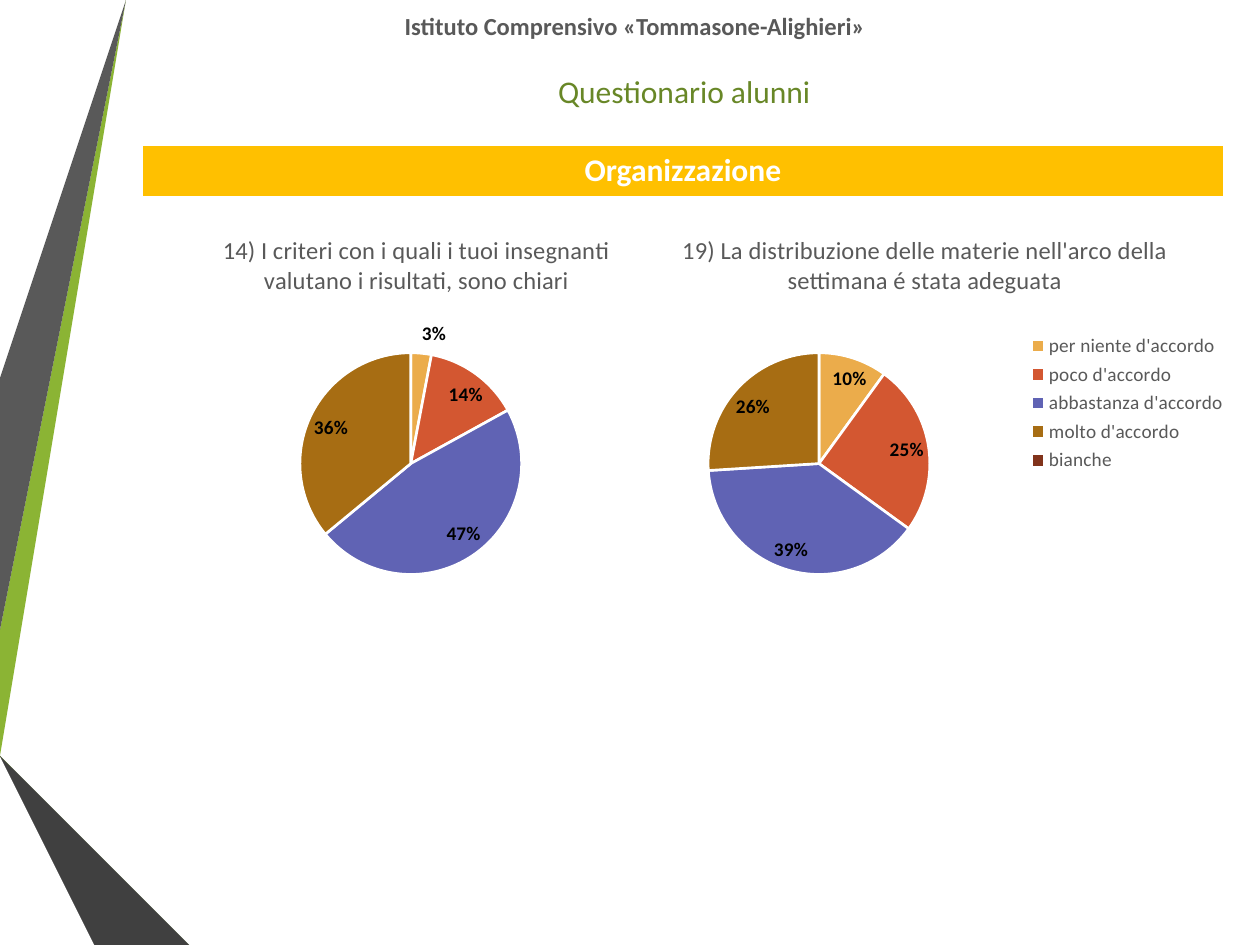
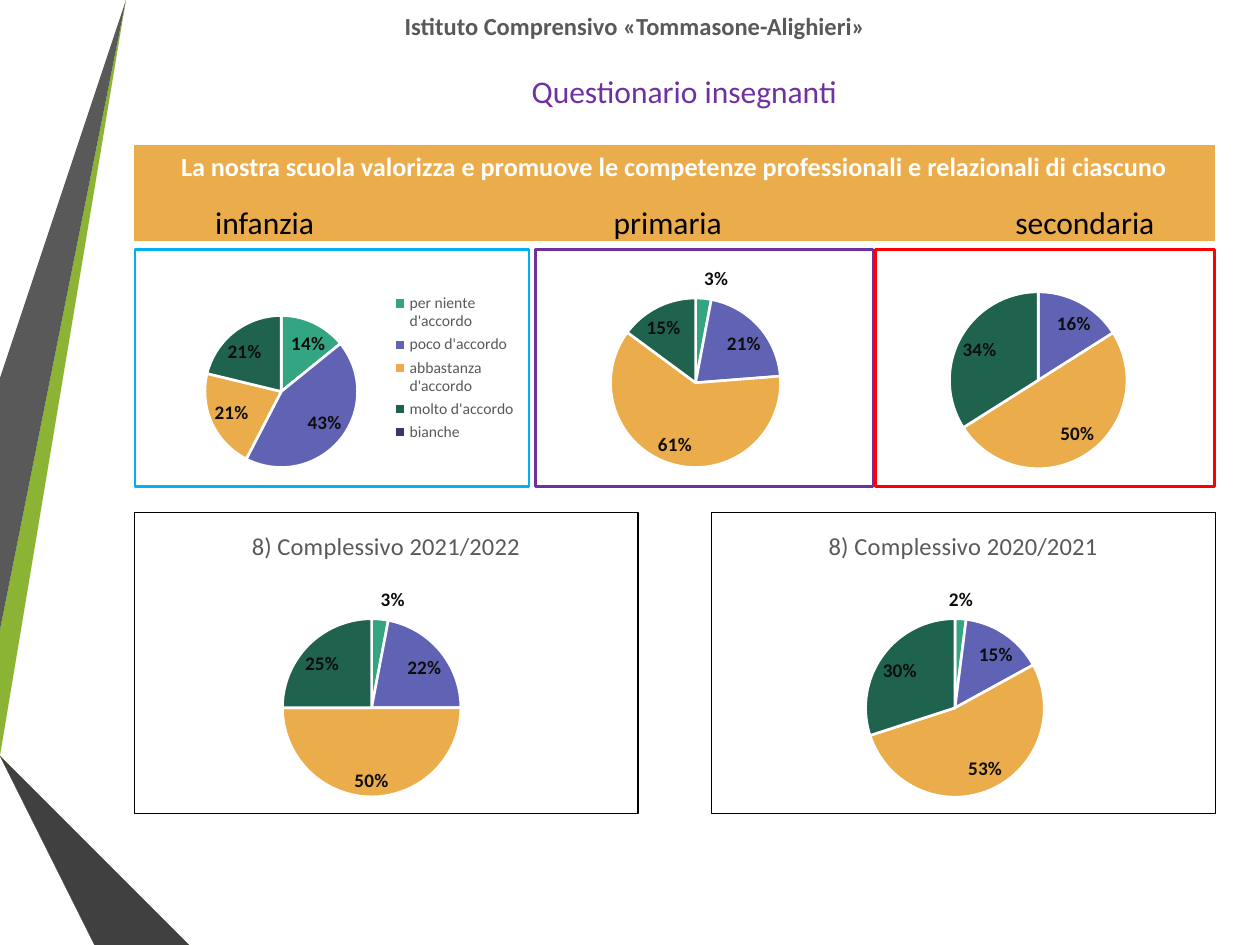
from lxml.etree import fromstring
from pptx import Presentation
from pptx.chart.data import CategoryChartData as PieData
from pptx.dml.color import RGBColor
from pptx.enum.chart import XL_CHART_TYPE as Kind, XL_LABEL_POSITION as Spot, XL_LEGEND_POSITION as Side
from pptx.enum.text import MSO_AUTO_SIZE as Fit, PP_ALIGN as Align
from pptx.util import Inches, Pt

FONT = "Calibri"
HUES = {
    "white": "FFFFFF", "black": "000000", "ink": "0D0D0D", "gray": "595959",
    "dark": "404040", "coal": "262626", "lime": "8BB434", "green": "688727",
    "moss": "465A1A", "gold": "FFC000", "sand": "EBAC4B", "rust": "D35731",
    "blue": "6063B4", "brown": "A76D13", "brick": "81331B", "mint": "33A583",
    "pine": "1F634F", "navy": "353771", "violet": "7030A0", "sky": "00B0F0",
    "red": "FF0000",
}
PUPIL = ["sand", "rust", "blue", "brown", "brick"]
STAFF = ["mint", "blue", "sand", "pine", "navy"]
SCALE = ["per niente d'accordo", "poco d'accordo", "abbastanza d'accordo",
         "molto d'accordo", "bianche"]
NUMS = ["1", "2", "3", "4", "5"]
STRIPS = [
    ("lime", [(0, 5.44), (0, 5.75), (0.22, 5.79), (1.17, 0), (0.89, 0)]),
    ("gray", [(0.83, 0), (0.55, 0), (0, 3.36), (0, 5.06)]),
    ("coal", [(0, 6.19), (0, 6.21), (0.93, 7.5), (0.99, 7.5)]),
    ("moss", [(0, 5.79), (0, 5.8), (1.56, 7.5), (1.63, 7.5)]),
    ("green", [(0, 5.79), (1.63, 7.5), (2.33, 7.5), (0.22, 5.79), (0, 5.75)]),
    ("dark", [(0, 6.19), (0.99, 7.5), (1.51, 7.5), (0, 5.86)]),
]
NS = ('xmlns:c="http://schemas.openxmlformats.org/drawingml/2006/chart" '
      'xmlns:a="http://schemas.openxmlformats.org/drawingml/2006/main"')
PLAIN = "{2D5ABB26-0587-4C30-8999-92F81FD0307C}"


def tint(name):
    return RGBColor.from_string(HUES[name])


def style(font, size, hue, bold=False):
    font.name = FONT
    font.size = Pt(size)
    font.bold = bold
    font.color.rgb = tint(hue)


def write(frame, text, size, hue, bold=False):
    frame.text = text
    line = frame.paragraphs[0]
    line.alignment = Align.CENTER
    style(line.runs[0].font, size, hue, bold)


def add_text(slide, box, text, size, hue, bold=False):
    frame = slide.shapes.add_textbox(*map(Inches, box)).text_frame
    frame.word_wrap = True
    frame.auto_size = Fit.SHAPE_TO_FIT_TEXT
    write(frame, text, size, hue, bold)


def add_strips(slide):
    group = slide.shapes.add_group_shape()
    for hue, dots in STRIPS:
        pen = group.shapes.build_freeform(*dots[0], scale=Inches(1))
        pen.add_line_segments(dots[1:], close=True)
        strip = pen.convert_to_shape()
        strip.shadow.inherit = False
        strip.fill.solid()
        strip.fill.fore_color.rgb = tint(hue)
        strip.line.fill.background()


def add_heads(slide, title, hue):
    add_text(slide, (1.14, 0.04, 7.8, 0.34),
             "Istituto Comprensivo «Tommasone-Alighieri»", 14, "gray", True)
    add_text(slide, (1.14, 0.52, 8.58, 0.4), title, 18, hue)


def add_band(slide, left, high, text, size, hue, edged):
    box = map(Inches, (left, 1.15, 8.58, high))
    table = slide.shapes.add_table(1, 1, *box).table
    if not edged:
        table._tbl.tblPr[0].text = PLAIN
    cell = table.cell(0, 0)
    cell.fill.solid()
    cell.fill.fore_color.rgb = tint(hue)
    write(cell.text_frame, text, size, "white", True)


def xml(tag, body="", attrs=""):
    return fromstring(f"<c:{tag} {NS} {attrs}>{body}</c:{tag}>")


def set_frame(chart, edge):
    body = "<a:noFill/><a:ln><a:noFill/></a:ln>"
    if edge:
        hue, width = edge
        fill = '<a:solidFill><a:srgbClr val="{}"/></a:solidFill>'
        body = (fill.format(HUES["white"]) + f'<a:ln w="{Pt(width)}">'
                + fill.format(HUES[hue]) + "</a:ln>")
    root = chart._chartSpace.chart
    root.addprevious(xml("roundedCorners", attrs='val="0"'))
    root.addnext(xml("spPr", body))


def set_plot(chart, box, disc):
    left, top, wide, high = box
    x, y, r = disc
    area = chart._chartSpace.chart.plotArea
    for old in area.findall("{*}layout"):
        area.remove(old)
    spots = {"x": (x - r - left) / wide, "y": (y - r - top) / high,
             "w": 2 * r / wide, "h": 2 * r / high}
    body = '<c:layoutTarget val="inner"/><c:xMode val="edge"/><c:yMode val="edge"/>'
    body += "".join(f'<c:{key} val="{val:.4f}"/>' for key, val in spots.items())
    area.insert(0, xml("layout", f"<c:manualLayout>{body}</c:manualLayout>"))


def set_labels(plot, vals, ink, zeros):
    plot.has_data_labels = True
    tags = plot.data_labels
    tags.show_percentage = True
    tags.show_value = False
    tags.number_format = "0%"
    tags.number_format_is_linked = False
    tags.position = Spot.BEST_FIT
    style(tags.font, 11, ink, True)
    series = plot.series[0]
    series._element.get_or_add_dLbls()
    whole = plot._element.find("{*}dLbls")
    own = series._element.find("{*}dLbls")
    own.getparent().replace(own, whole)
    if not zeros:
        gone = [i for i, val in enumerate(vals) if val == 0]
        for spot, i in enumerate(gone):
            whole.insert(spot, xml("dLbl", f'<c:idx val="{i}"/><c:delete val="1"/>'))


def add_pie(slide, box, disc, vals, hues, title="", key=0, edge=None,
            ink="ink", zeros=False):
    data = PieData()
    data.categories = SCALE if key else NUMS
    data.add_series(title or "Series 1", vals)
    chart = slide.shapes.add_chart(Kind.PIE, *map(Inches, box), data).chart
    style(chart.font, 10, "black")
    chart.has_title = bool(title)
    if title:
        write(chart.chart_title.text_frame, title, 14, "gray")
        chart.chart_title.include_in_layout = False
    chart.has_legend = bool(key)
    if key:
        chart.legend.position = Side.RIGHT
        chart.legend.include_in_layout = False
        style(chart.legend.font, key, "gray")
    plot = chart.plots[0]
    plot.vary_by_categories = True
    for i, hue in enumerate(hues):
        look = plot.series[0].points[i].format
        look.fill.solid()
        look.fill.fore_color.rgb = tint(hue)
        look.line.color.rgb = tint("white")
        look.line.width = Pt(1.5)
    set_labels(plot, vals, ink, zeros)
    set_plot(chart, box, disc)
    set_frame(chart, edge)


def add_pupils(slide):
    add_strips(slide)
    add_heads(slide, "Questionario alunni", "green")
    add_band(slide, 1.13, 0.41, "Organizzazione", 18, "gold", True)
    pies = [
        ((1.14, 1.7, 4.33, 3), 3.26, [3, 14, 47, 36, 0], 0,
         "14) I criteri con i quali i tuoi insegnanti valutano i risultati, sono chiari"),
        ((4.84, 1.7, 5, 3), 6.5, [10, 25, 39, 26, 0], 11,
         "19) La distribuzione delle materie nell'arco della settimana é stata adeguata"),
    ]
    for box, x, vals, key, title in pies:
        add_pie(slide, box, (x, 3.68, 0.88), vals, PUPIL, title, key,
                ink="black", zeros=True)


def add_staff(slide):
    add_strips(slide)
    years = [
        (5.64, 7.58, [2, 15, 53, 30, 0], "2020/2021", 0.25),
        (1.06, 2.95, [3, 22, 50, 25, 0], "2021/2022", 0.75),
    ]
    for left, x, vals, year, width in years:
        add_pie(slide, (left, 4.06, 4.01, 2.4), (x, 5.62, 0.71), vals, STAFF,
                f"8) Complessivo {year}", edge=("black", width))
    grades = [
        (6.94, 2.71, (8.24, 3.02, 0.71), [0, 16, 50, 34, 0], "red", 0),
        (4.24, 2.7, (5.52, 3.04, 0.68), [3, 21, 62, 15, 0], "violet", 0),
        (1.06, 3.15, (2.23, 3.11, 0.61), [14, 43, 21, 21, 0], "sky", 9),
    ]
    for left, wide, disc, vals, hue, key in grades:
        add_pie(slide, (left, 1.97, wide, 1.9), disc, vals, STAFF, key=key,
                edge=(hue, 1.5))
    add_band(slide, 1.06, 0.76, "La nostra scuola valorizza e promuove le competenze "
             "professionali e relazionali di ciascuno", 15, "sand", False)
    add_heads(slide, "Questionario insegnanti", "violet")
    for left, name in [(4.26, "primaria"), (7.57, "secondaria"), (1.06, "infanzia")]:
        add_text(slide, (left, 1.56, 2.08, 0.4), name, 18, "black")


def main():
    deck = Presentation()
    deck.slide_width, deck.slide_height = Inches(10), Inches(7.5)
    for fill in (add_pupils, add_staff):
        fill(deck.slides.add_slide(deck.slide_layouts[6]))
    deck.save("out.pptx")


if __name__ == "__main__":
    main()
